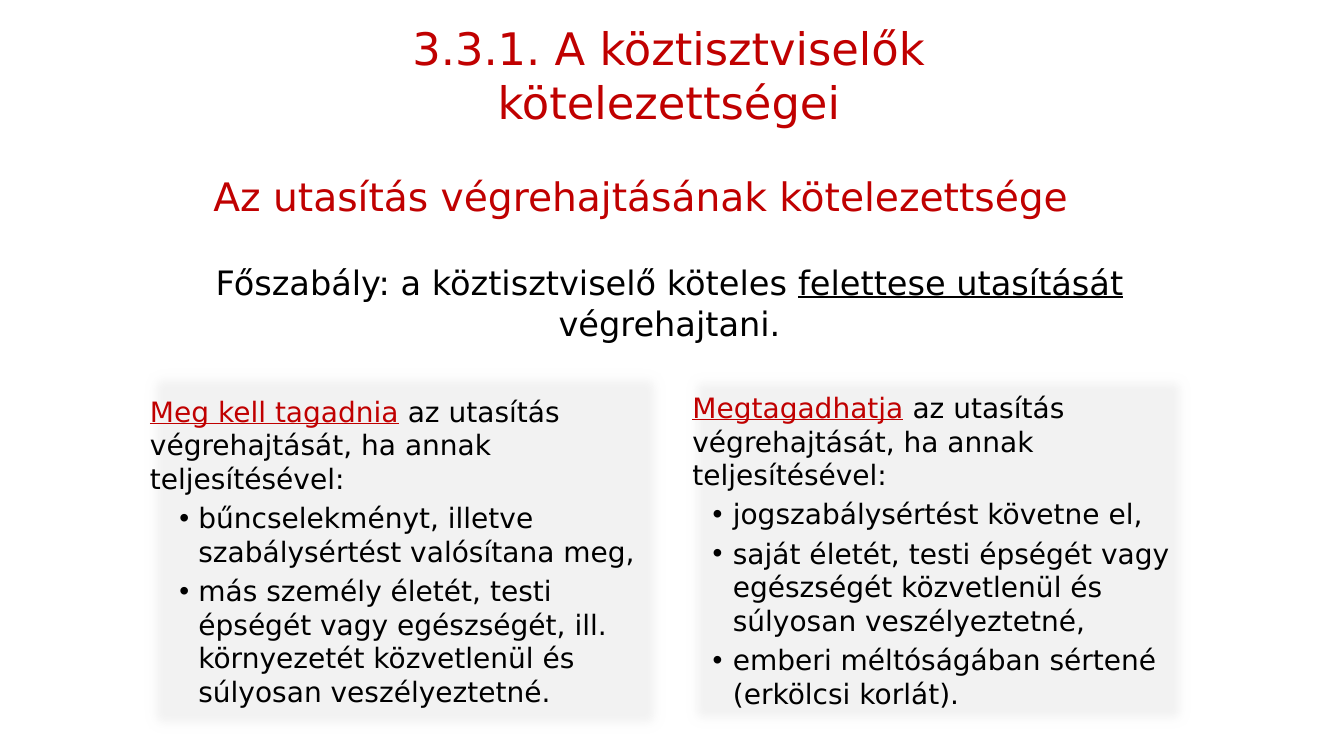
from lxml.etree import SubElement
from pptx import Presentation
from pptx.dml.color import RGBColor
from pptx.enum.shapes import MSO_SHAPE
from pptx.enum.text import MSO_ANCHOR, MSO_AUTO_SIZE, PP_ALIGN
from pptx.oxml.ns import qn
from pptx.util import Cm, Pt

COLORS = {"red": "C00000", "black": "000000", "panel": "F2F2F2", "edge": "FFFF00"}
FONT = "DejaVu Sans"


def color(name):
    return RGBColor.from_string(COLORS[name])


def write(par, text, size=20, tint="black", under=False, align=PP_ALIGN.LEFT,
          before=0, bullet=None):
    """Add a run; bullet is (text indent, hanging width) in cm."""
    par.alignment = align
    par.space_before = Pt(before)
    if bullet:
        props = par._p.get_or_add_pPr()
        props.set("marL", str(Cm(bullet[0])))
        props.set("indent", str(-Cm(bullet[1])))
        tone = SubElement(props, qn("a:buClr"))
        SubElement(tone, qn("a:srgbClr"), val=COLORS["black"])
        SubElement(props, qn("a:buFont"), typeface="Arial")
        SubElement(props, qn("a:buChar"), char="•")
        par.level = 1
    run = par.add_run()
    run.text = text
    font = run.font
    font.name, font.size, font.underline = FONT, Pt(size), under
    font.color.rgb = color(tint)


deck = Presentation()
deck.slide_width, deck.slide_height = Cm(33.87), Cm(19.05)
slide = deck.slides.add_slide(deck.slide_layouts[6])

# Headings and main rule: place, anchor, alignment, size, runs
heads = [
    ((7.59, 0.41, 18.54, 3), MSO_ANCHOR.TOP, PP_ALIGN.CENTER, 32,
     [("3.3.1. A köztisztviselők kötelezettségei", "red", False)]),
    ((5.13, 4.22, 24.51, 1.45), MSO_ANCHOR.MIDDLE, PP_ALIGN.LEFT, 28,
     [("Az utasítás végrehajtásának kötelezettsége", "red", False)]),
    ((4.62, 6.48, 24.51, 2.31), MSO_ANCHOR.TOP, PP_ALIGN.CENTER, 24,
     [("Főszabály: a köztisztviselő köteles ", "black", False),
      ("felettese utasítását", "black", True),
      (" végrehajtani.", "black", False)]),
]
for place, anchor, align, size, runs in heads:
    frame = slide.shapes.add_textbox(*map(Cm, place)).text_frame
    frame.word_wrap = True
    frame.auto_size = MSO_AUTO_SIZE.SHAPE_TO_FIT_TEXT
    frame.vertical_anchor = anchor
    for text, tint, under in runs:
        write(frame.paragraphs[0], text, size=size, tint=tint, under=under,
              align=align)

# Soft-edged panels: place, outline, bullet indent, lead words, items
panels = [
    ((3.53, 9.19, 13.34, 9.4), None, (1.22, 0.48), "Meg kell tagadnia",
     ["bűncselekményt, illetve szabálysértést valósítana meg,",
      "más személy életét, testi épségét vagy egészségét, ill. "
      "környezetét közvetlenül és súlyosan veszélyeztetné."]),
    ((17.2, 9.27, 12.9, 9.19), "edge", (1.02, 0.51), "Megtagadhatja",
     ["jogszabálysértést követne el,",
      "saját életét, testi épségét vagy egészségét közvetlenül és "
      "súlyosan veszélyeztetné,",
      "emberi méltóságában sértené (erkölcsi korlát)."]),
]
for place, edge, bullet, lead, items in panels:
    panel = slide.shapes.add_shape(MSO_SHAPE.RECTANGLE, *map(Cm, place))
    panel.fill.solid()
    panel.fill.fore_color.rgb = color("panel")
    if edge:
        panel.line.color.rgb = color(edge)
        panel.line.width = Pt(0.75)
    else:
        panel.line.fill.background()
    panel.shadow.inherit = False
    effects = panel._element.spPr.find(qn("a:effectLst"))
    SubElement(effects, qn("a:softEdge"), rad="112500")

    frame = panel.text_frame
    frame.word_wrap = True
    frame.vertical_anchor = MSO_ANCHOR.MIDDLE
    first = frame.paragraphs[0]
    write(first, lead, tint="red", under=True)
    write(first, " az utasítás végrehajtását, ha annak teljesítésével:")
    for item in items:
        write(frame.add_paragraph(), item, before=4, bullet=bullet)

deck.save("out.pptx")
